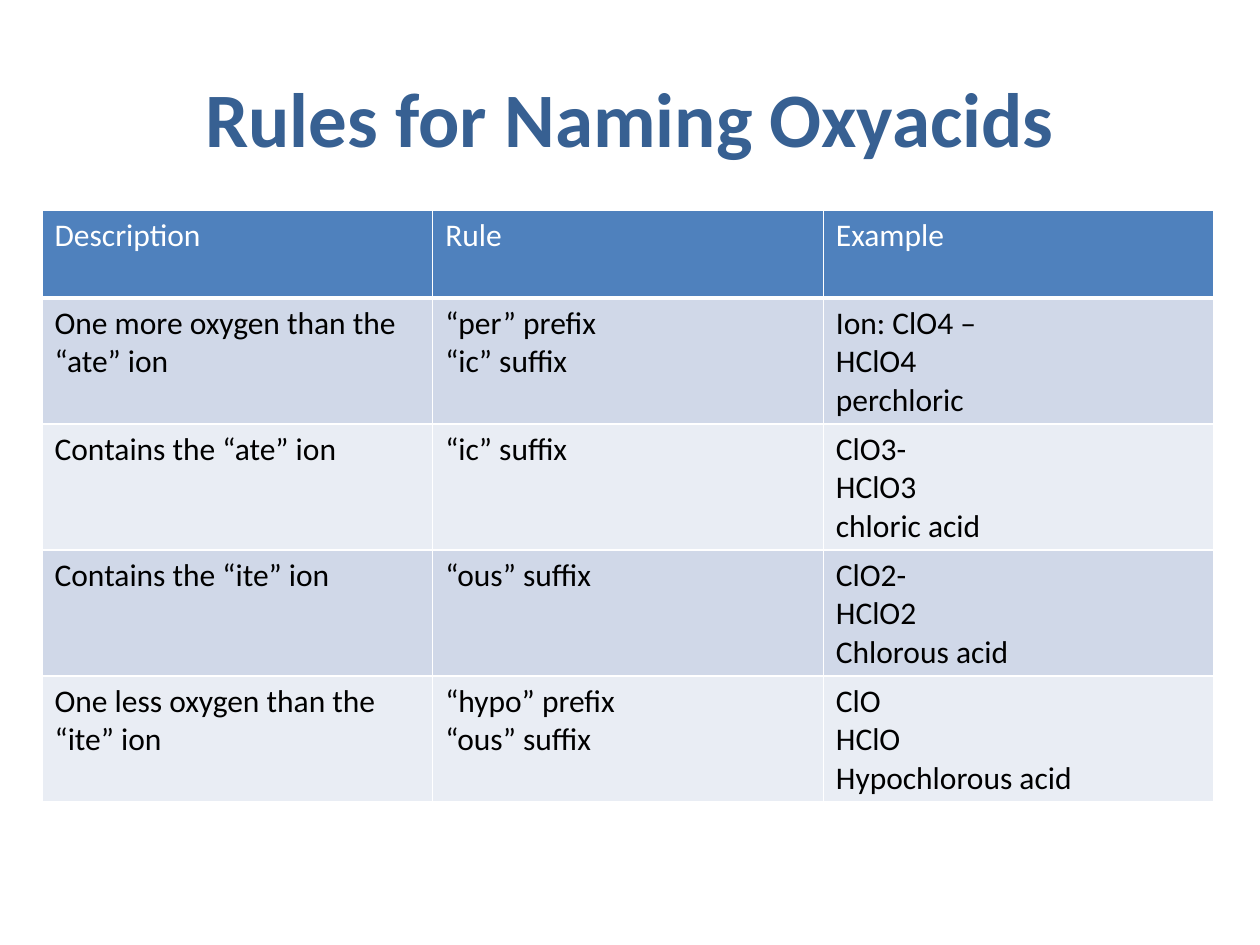
from lxml import etree
from pptx import Presentation
from pptx import util as u
from pptx.dml.color import RGBColor
from pptx.enum import text
from pptx.oxml import ns

PX = 914400 / 126
FONT = "Calibri"
WHITE = RGBColor(0xFF, 0xFF, 0xFF)
BLACK = RGBColor(0, 0, 0)
TITLE_BLUE = RGBColor(0x37, 0x60, 0x92)
HEADER_BLUE = RGBColor(0x4F, 0x81, 0xBD)
BANDS = (RGBColor(0xD0, 0xD8, 0xE8), RGBColor(0xE9, 0xED, 0xF4))

HEADER_HEIGHT, ROW_HEIGHT = 88, 126
HEADINGS = ("Description", "Rule", "Example")
RULES = (
    ("One more oxygen than the “ate” ion", "“per” prefix\n“ic” suffix",
     "Ion: ClO4 –\nHClO4\nperchloric"),
    ("Contains the “ate” ion", "“ic” suffix", "ClO3-\nHClO3\nchloric acid"),
    ("Contains the “ite” ion", "“ous” suffix", "ClO2-\nHClO2\nChlorous acid"),
    ("One less oxygen than the “ite” ion", "“hypo” prefix\n“ous” suffix",
     "ClO\nHClO\nHypochlorous acid"),
)


def px(length):
    return u.Emu(round(length * PX))


def add_run(paragraph, words, size, color, bold=False):
    run = paragraph.add_run()
    run.text = words
    run.font.name = FONT
    run.font.size = u.Pt(size)
    run.font.bold = bold
    run.font.color.rgb = color


def set_borders(cell, bottom):
    """Draw white cell borders, 1 pt wide except for the bottom one."""
    properties = cell._tc.get_or_add_tcPr()
    for side, width in (("L", 1), ("R", 1), ("T", 1), ("B", bottom)):
        line = etree.SubElement(properties, ns.qn(f"a:ln{side}"), w=str(u.Pt(width)))
        fill = etree.SubElement(line, ns.qn("a:solidFill"))
        etree.SubElement(fill, ns.qn("a:srgbClr"), val=str(WHITE))


def fill_cell(cell, words, fill, color, bottom=1):
    set_borders(cell, bottom)
    cell.fill.solid()
    cell.fill.fore_color.rgb = fill
    frame = cell.text_frame
    for index, line in enumerate(words.split("\n")):
        paragraph = frame.add_paragraph() if index else frame.paragraphs[0]
        add_run(paragraph, line, 18, color)


def add_title(slide, left, top, width, height):
    frame = slide.shapes.add_textbox(px(left), px(top), px(width), px(height)).text_frame
    frame.word_wrap = True
    frame.vertical_anchor = text.MSO_ANCHOR.MIDDLE
    paragraph = frame.paragraphs[0]
    paragraph.alignment = text.PP_ALIGN.CENTER
    add_run(paragraph, "Rules for Naming Oxyacids", 44, TITLE_BLUE, bold=True)


def add_rules_table(slide, left, top, width):
    height = HEADER_HEIGHT + ROW_HEIGHT * len(RULES)
    table = slide.shapes.add_table(len(RULES) + 1, len(HEADINGS), px(left), px(top),
                                   px(width), px(height)).table
    for column in table.columns:
        column.width = px(width / len(HEADINGS))
    for index, row in enumerate(table.rows):
        row.height = px(ROW_HEIGHT if index else HEADER_HEIGHT)
    for cell, heading in zip(table.rows[0].cells, HEADINGS):
        fill_cell(cell, heading, HEADER_BLUE, WHITE, bottom=3)
    for index, rule in enumerate(RULES):
        for cell, words in zip(table.rows[index + 1].cells, rule):
            fill_cell(cell, words, BANDS[index % 2], BLACK)


def main():
    presentation = Presentation()
    presentation.slide_width, presentation.slide_height = px(1260), px(945)
    slide = presentation.slides.add_slide(presentation.slide_layouts[6])
    add_title(slide, 63, 38, 1134, 158)
    add_rules_table(slide, 42, 210, 1172)
    presentation.save("out.pptx")


if __name__ == "__main__":
    main()
